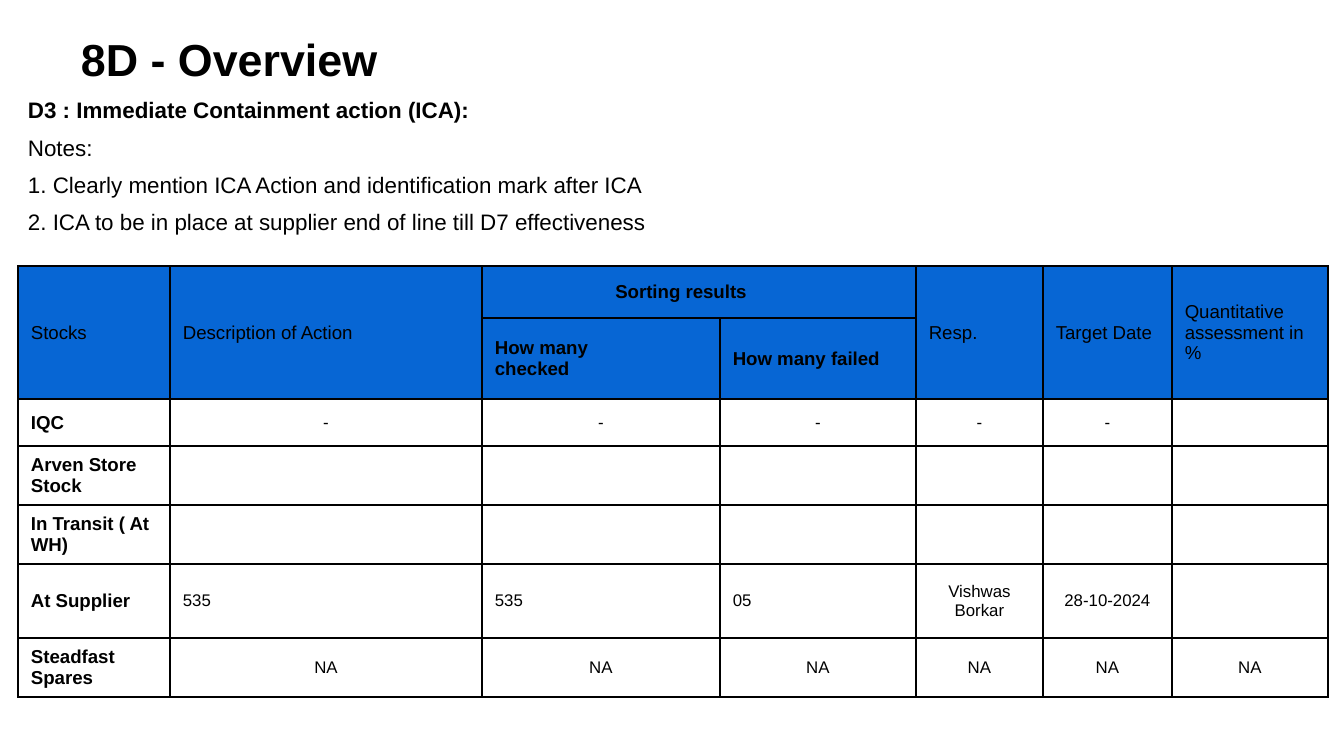
from lxml.etree import SubElement
from pptx import Presentation
from pptx.dml.color import RGBColor
from pptx.enum.text import MSO_ANCHOR, PP_ALIGN
from pptx.oxml.ns import qn
from pptx.util import Emu, Pt

PX = 914400 / 134.4
FONT = "Arial"
COLORS = {"ink": "000000", "header": "0766D4"}

COLUMN_WIDTHS = [152, 312, 238, 196, 127, 129, 156]
ROW_HEIGHTS = [52, 76, 47, 55, 55, 74, 55]
HEADINGS = ["Stocks", "Description of Action", "Sorting results", "",
            "Resp.", "Target Date", "Quantitative assessment in %"]
SUBHEADINGS = {2: "How many\nchecked", 3: "How many failed"}
STOCKS = [
    ["IQC"] + ["-"] * 5 + [""],
    ["Arven Store Stock"] + [""] * 6,
    ["In Transit ( At WH)"] + [""] * 6,
    ["At Supplier", "535", "535", "05", "Vishwas Borkar", "28-10-2024", ""],
    ["Steadfast Spares"] + ["NA"] * 6,
]
NOTES = [
    "D3 : Immediate Containment action (ICA):",
    "Notes:",
    "1. Clearly mention ICA Action and identification mark after ICA",
    "2. ICA to be in place at supplier end of line till D7 effectiveness",
]


def px(length):
    return Emu(round(length * PX))


def set_all(target, values):
    for name, value in values.items():
        setattr(target, name, value)


def set_margins(target, left, top, right, bottom):
    set_all(target, {"margin_left": px(left), "margin_top": px(top),
                     "margin_right": px(right), "margin_bottom": px(bottom)})


def write(paragraph, text, size, bold=False):
    if not text:
        SubElement(paragraph._p, qn("a:endParaRPr"), sz=str(size * 100))
        return
    span = paragraph.add_run()
    span.text = text
    set_all(span.font, {"name": FONT, "size": Pt(size), "bold": bold})
    span.font.color.rgb = RGBColor.from_string(COLORS["ink"])


def add_frame(page, box, margins, anchor):
    frame = page.shapes.add_textbox(*map(px, box)).text_frame
    set_all(frame, {"word_wrap": True, "vertical_anchor": anchor})
    set_margins(frame, *margins)
    return frame


def add_title(page, box):
    frame = add_frame(page, box, (62, 13, 13, 13), MSO_ANCHOR.TOP)
    write(frame.paragraphs[0], "8D - Overview", 24, bold=True)


def add_notes(page, box):
    frame = add_frame(page, box, (0, 0, 0, 0), MSO_ANCHOR.MIDDLE)
    for index, note in enumerate(NOTES):
        paragraph = frame.paragraphs[0] if index == 0 else frame.add_paragraph()
        if index:
            paragraph.space_before = Pt(5.6)
        write(paragraph, note, 12, bold=index == 0)


def add_borders(cell):
    properties = cell._tc.get_or_add_tcPr()
    for side in ("lnL", "lnR", "lnT", "lnB"):
        line = SubElement(properties, qn(f"a:{side}"), w=str(Pt(1)))
        fill = SubElement(line, qn("a:solidFill"))
        SubElement(fill, qn("a:srgbClr"), val=COLORS["ink"])


def fill_cell(cell, text, size, bold=False, align=PP_ALIGN.LEFT, header=False):
    add_borders(cell)
    if header:
        cell.fill.solid()
        cell.fill.fore_color.rgb = RGBColor.from_string(COLORS["header"])
    else:
        cell.fill.background()
    cell.vertical_anchor = MSO_ANCHOR.MIDDLE
    set_margins(cell, 13, 7, 13, 7)
    for index, line in enumerate(text.split("\n")):
        frame = cell.text_frame
        paragraph = frame.paragraphs[0] if index == 0 else frame.add_paragraph()
        paragraph.alignment = align
        write(paragraph, line, size, bold)


def fill_header(table):
    for column, heading in enumerate(HEADINGS):
        sorting = column == 2
        fill_cell(table.cell(0, column), heading, 10, sorting,
                  PP_ALIGN.CENTER if sorting else PP_ALIGN.LEFT, header=True)
        fill_cell(table.cell(1, column), SUBHEADINGS.get(column, ""), 10, True,
                  header=True)
        if column not in SUBHEADINGS:
            table.cell(0, column).merge(table.cell(1, column))
    sorting_cell = table.cell(0, 2)
    sorting_cell.merge(table.cell(0, 3))
    sorting_cell.margin_right = px(49)


def fill_stocks(table):
    for row, values in enumerate(STOCKS, start=2):
        for column, value in enumerate(values):
            stock = column == 0
            left = stock or (values[0] == "At Supplier" and column < 4)
            fill_cell(table.cell(row, column), value, 10 if stock else 9, stock,
                      PP_ALIGN.LEFT if left else PP_ALIGN.CENTER)


def add_containment_table(page, left, top):
    box = (left, top, sum(COLUMN_WIDTHS), sum(ROW_HEIGHTS))
    table = page.shapes.add_table(len(ROW_HEIGHTS), len(COLUMN_WIDTHS),
                                  *map(px, box)).table
    set_all(table, {"first_row": False, "horz_banding": False})
    for column, width in zip(table.columns, COLUMN_WIDTHS):
        column.width = px(width)
    for row, height in zip(table.rows, ROW_HEIGHTS):
        row.height = px(height)
    fill_header(table)
    fill_stocks(table)


def main():
    deck = Presentation()
    set_all(deck, {"slide_width": px(1344), "slide_height": px(756)})
    page = deck.slides.add_slide(deck.slide_layouts[6])
    add_title(page, (19, 19, 1286, 85))
    add_notes(page, (28, 66, 1275, 200))
    add_containment_table(page, 18, 266)
    deck.save("out.pptx")


if __name__ == "__main__":
    main()
